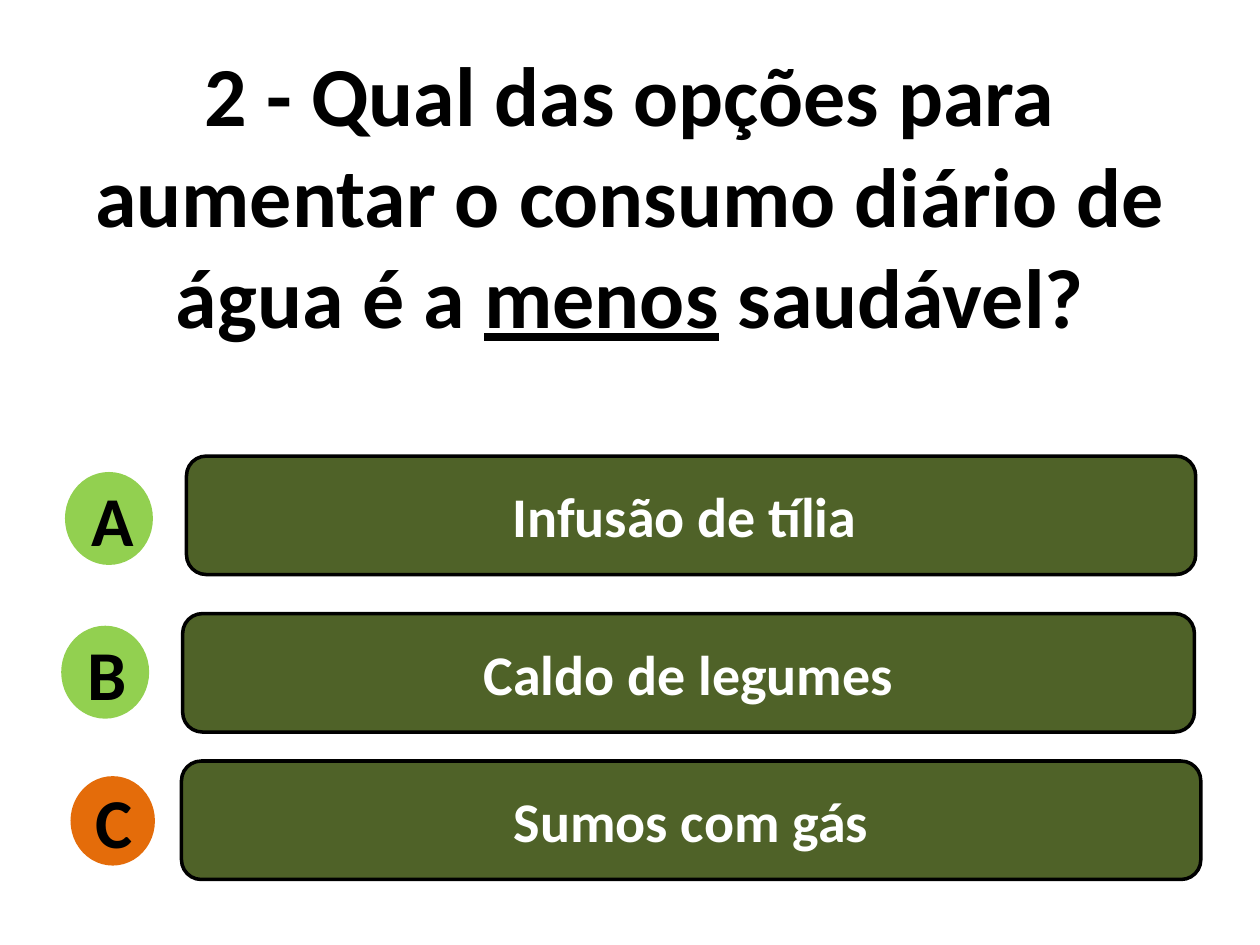
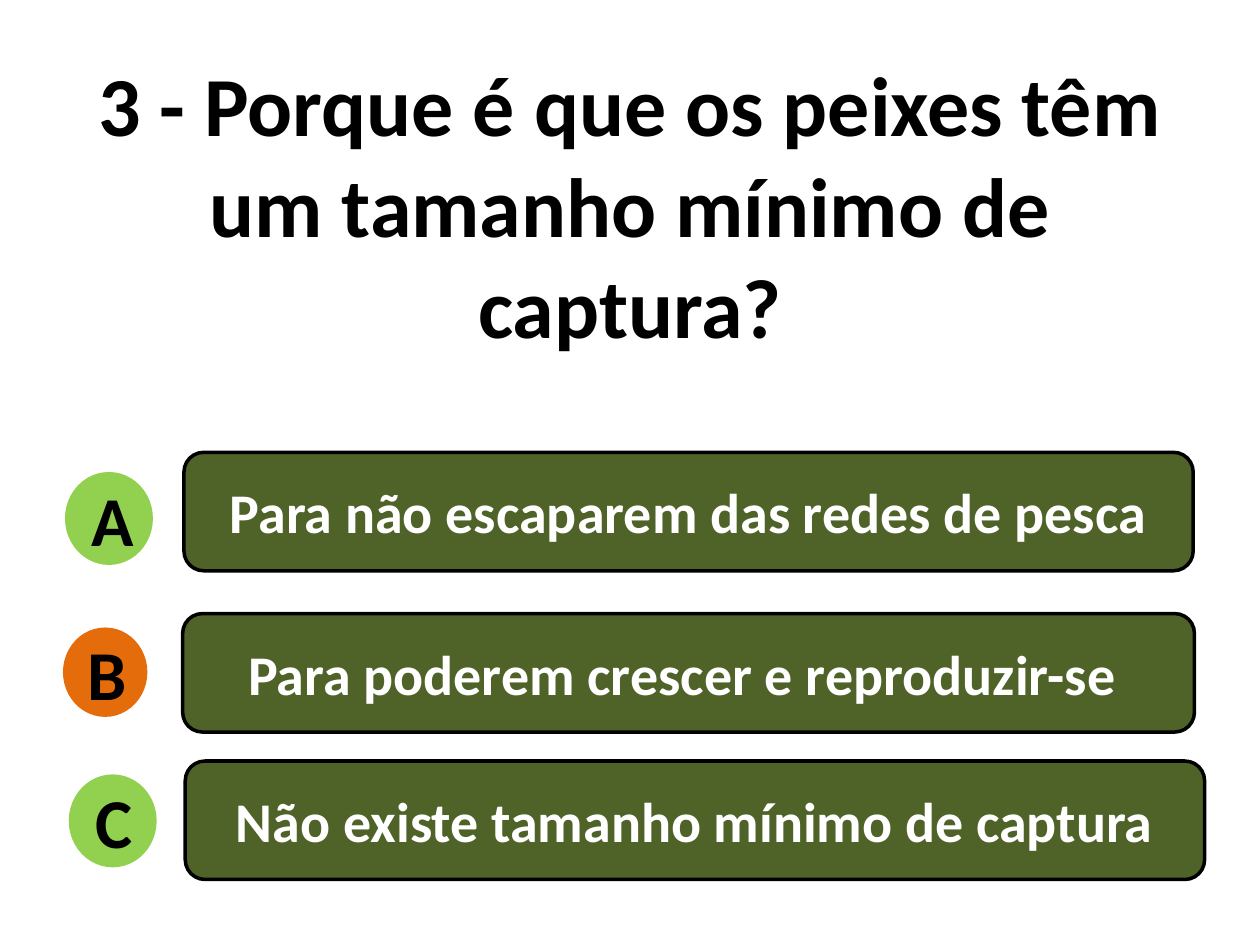
import pptx
import pptx.dml.color
import pptx.enum.shapes
import pptx.enum.text
import pptx.util

Inches = pptx.util.Inches
SHAPES = pptx.enum.shapes.MSO_SHAPE
TITLE_ONLY = 5

QUESTIONS = [
    {
        "title": [
            ("2 - Qual das opções para aumentar o consumo diário de água é a ", False),
            ("menos", True),
            (" saudável?", False),
        ],
        "title_box": (0.51, 0.29, 8.98, 3.43),
        "answers": [
            ("Infusão de tília ", 1.48, 3.62),
            ("Caldo de legumes", 1.45, 4.87),
            ("Sumos com gás", 1.44, 6.04),
        ],
        "correct": "C",
    },
    {
        "title": [("3 - Porque é que os peixes têm um tamanho mínimo de captura?", False)],
        "title_box": (0.67, 0.37, 8.66, 3.43),
        "answers": [
            ("Para não escaparem das redes de pesca", 1.46, 3.59),
            ("Para poderem crescer e reproduzir-se ", 1.45, 4.87),
            ("Não existe tamanho mínimo de captura", 1.47, 6.04),
        ],
        "correct": "B",
    },
]
ANSWER_WIDTHS = [8.01, 8.03, 8.09]
BADGES = [("A", 0.53, 3.76), ("B", 0.5, 4.98), ("C", 0.56, 6.16)]


def color(value):
    return pptx.dml.color.RGBColor.from_string(value)


class Quiz:
    font = "Calibri"
    black = "000000"
    white = "FFFFFF"
    answer_fill = "4F6228"
    badge_fill = "92D050"
    correct_fill = "E46C0A"

    def __init__(self, deck):
        self.deck = deck
        self.slide = None

    def add_page(self):
        self.slide = self.deck.slides.add_slide(self.deck.slide_layouts[TITLE_ONLY])

    def add_text(self, frame, spans, size, ink):
        frame.word_wrap = True
        para = frame.paragraphs[0]
        para.alignment = pptx.enum.text.PP_ALIGN.CENTER
        for text, underlined in spans:
            span = para.add_run()
            span.text = text
            span.font.name = self.font
            span.font.size = pptx.util.Pt(size)
            span.font.bold = True
            span.font.underline = underlined
            span.font.color.rgb = color(ink)

    def title(self, spans, place):
        box = self.slide.shapes.title
        box.left, box.top, box.width, box.height = map(Inches, place)
        frame = box.text_frame
        frame.auto_size = pptx.enum.text.MSO_AUTO_SIZE.NONE
        frame.vertical_anchor = pptx.enum.text.MSO_ANCHOR.TOP
        self.add_text(frame, spans, 48, self.black)

    def shape(self, kind, place, fill, line, text, size, ink):
        box = self.slide.shapes.add_shape(kind, *map(Inches, place))
        box.shadow.inherit = False
        box.fill.solid()
        box.fill.fore_color.rgb = color(fill)
        if line:
            box.line.color.rgb = color(line)
            box.line.width = pptx.util.Pt(2)
        else:
            box.line.fill.background()
        box.text_frame.vertical_anchor = pptx.enum.text.MSO_ANCHOR.MIDDLE
        self.add_text(box.text_frame, [(text, False)], size, ink)

    def answer(self, text, left, top, width):
        self.shape(SHAPES.FLOWCHART_ALTERNATE_PROCESS, (left, top, width, 0.94),
                   self.answer_fill, self.black, text, 32, self.white)

    def badge(self, letter, left, top, correct):
        fill = self.correct_fill if correct else self.badge_fill
        line = None if correct else self.badge_fill
        self.shape(SHAPES.OVAL, (left, top, 0.67, 0.71), fill, line, letter, 40, self.black)


def main():
    deck = pptx.Presentation()
    deck.slide_width = Inches(10)
    deck.slide_height = Inches(7.5)
    quiz = Quiz(deck)
    for question in QUESTIONS:
        quiz.add_page()
        quiz.title(question["title"], question["title_box"])
        for (text, left, top), width in zip(question["answers"], ANSWER_WIDTHS):
            quiz.answer(text, left, top, width)
        for letter, left, top in BADGES:
            quiz.badge(letter, left, top, letter == question["correct"])
    deck.save("out.pptx")


if __name__ == "__main__":
    main()
